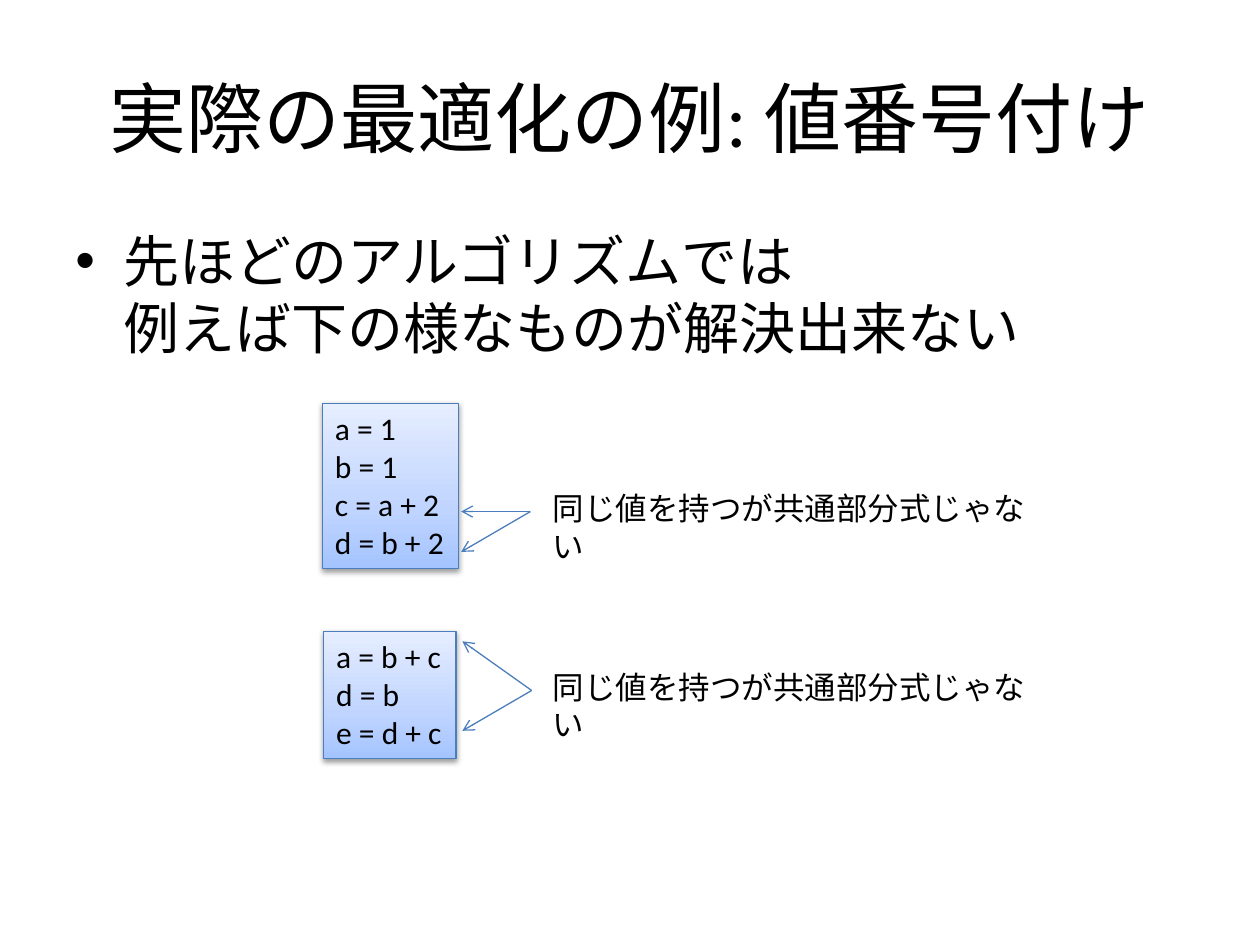
from copy import deepcopy
from dataclasses import dataclass

from lxml import etree
from pptx import Presentation
from pptx import util as u
from pptx.dml.color import RGBColor
from pptx.enum import shapes, text
from pptx.oxml import parse_xml
from pptx.oxml.ns import nsdecls, qn


@dataclass(frozen=True)
class Theme:
    ink: str = "000000"
    edge: str = "4B7EBC"
    gradient: tuple = ((0, "A4C4FF"), (0.35, "BFD4FF"), (1, "E6EEFF"))
    edge_width: float = 0.75
    title: int = 44
    body: int = 32
    small: int = 18
    main_font: str = "Calibri"
    note_font: str = "Arial"


class SlideBuilder:
    COLUMNS, ROWS = 100, 75

    def __init__(self, deck, theme):
        self.theme = theme
        self.cell_width = deck.slide_width / self.COLUMNS
        self.cell_height = deck.slide_height / self.ROWS
        self.slide = deck.slides.add_slide(deck.slide_layouts[6])

    def place(self, *lengths):
        cells = (self.cell_width, self.cell_height) * 2
        return [u.Emu(round(n * cell)) for n, cell in zip(lengths, cells)]

    def add_text(self, frame, paragraphs, size, font, align=text.PP_ALIGN.LEFT):
        for index, content in enumerate(paragraphs):
            paragraph = frame.add_paragraph() if index else frame.paragraphs[0]
            paragraph.alignment = align
            for number, line in enumerate(content.split("\n")):
                if number:
                    paragraph.add_line_break()
                run = paragraph.add_run()
                run.text = line
                run.font.size = u.Pt(size)
                run.font.name = font
                run.font.color.rgb = RGBColor.from_string(self.theme.ink)

    def text_box(self, area, content, size, font, **style):
        frame = self.slide.shapes.add_textbox(*self.place(*area)).text_frame
        frame.word_wrap = True
        self.add_text(frame, [content], size, font, **style)
        return frame

    def title(self, area, content):
        frame = self.text_box(area, content, self.theme.title,
                              self.theme.main_font, align=text.PP_ALIGN.CENTER)
        frame.vertical_anchor = text.MSO_ANCHOR.MIDDLE

    def bullet(self, area, content):
        frame = self.text_box(area, content, self.theme.body, self.theme.main_font)
        paragraph = frame.paragraphs[0]
        paragraph.space_before = u.Pt(self.theme.body * 0.2)
        properties = paragraph._p.get_or_add_pPr()
        indent = u.Inches(0.38)
        properties.set("marL", str(indent))
        properties.set("indent", str(-indent))
        etree.SubElement(properties, qn("a:buFont")).set("typeface", "Arial")
        etree.SubElement(properties, qn("a:buChar")).set("char", "•")

    def note(self, area, content):
        self.text_box(area, content, self.theme.small, self.theme.note_font)

    def outline(self, line):
        line.color.rgb = RGBColor.from_string(self.theme.edge)
        line.width = u.Pt(self.theme.edge_width)

    def code_block(self, area, statements):
        block = self.slide.shapes.add_shape(
            shapes.MSO_SHAPE.RECTANGLE, *self.place(*area))
        block.fill.gradient()
        block.fill.gradient_angle = 90
        stop_list = block._element.spPr.find(".//" + qn("a:gsLst"))
        stop_list.insert(1, deepcopy(stop_list[0]))
        for stop, (position, color) in zip(block.fill.gradient_stops,
                                           self.theme.gradient):
            stop.position = position
            stop.color.rgb = RGBColor.from_string(color)
        self.outline(block.line)
        block.shadow.inherit = False
        block._element.spPr.find(qn("a:effectLst")).append(parse_xml(
            f'<a:outerShdw {nsdecls("a")} blurRad="40000" dist="20000" '
            f'dir="5400000" rotWithShape="0"><a:srgbClr val="{self.theme.ink}">'
            '<a:alpha val="38000"/></a:srgbClr></a:outerShdw>'))
        frame = block.text_frame
        frame.word_wrap = False
        frame.auto_size = text.MSO_AUTO_SIZE.SHAPE_TO_FIT_TEXT
        frame.vertical_anchor = text.MSO_ANCHOR.TOP
        self.add_text(frame, statements, self.theme.small, self.theme.main_font)

    def arrow(self, start, end):
        arrow = self.slide.shapes.add_connector(
            shapes.MSO_CONNECTOR.STRAIGHT, *self.place(*start, *end))
        self.outline(arrow.line)
        etree.SubElement(arrow.line._get_or_add_ln(),
                         qn("a:tailEnd")).set("type", "arrow")
        etree.SubElement(arrow._element.spPr, qn("a:effectLst"))


def main():
    deck = Presentation()
    deck.slide_width, deck.slide_height = u.Inches(10), u.Inches(7.5)
    page = SlideBuilder(deck, Theme())
    page.title((5, 3, 90, 12.5), "実際の最適化の例: 値番号付け")
    page.bullet((5, 17.5, 90, 49.5),
                "先ほどのアルゴリズムでは\n例えば下の様なものが解決出来ない")

    examples = [
        ((25.7, 50.1, 10.5, 10.1), ["a = b + c", "d = b", "e = d + c"],
         (42.2, 54.8), (50.9, 58)),
        ((25.6, 32, 10.8, 13.1), ["a = 1", "b = 1", "c = a + 2", "d = b + 2"],
         (42.1, 40.6), (40.6, 43.8)),
    ]
    for code_area, statements, (fork_x, fork_y), target_rows in examples:
        page.code_block(code_area, statements)
        for row in target_rows:
            page.arrow((fork_x, fork_y), (fork_x - 5.5, row))
        page.note((42.9, fork_y - 2.3, 40, 4), "同じ値を持つが共通部分式じゃない")
    deck.save("out.pptx")


if __name__ == "__main__":
    main()
